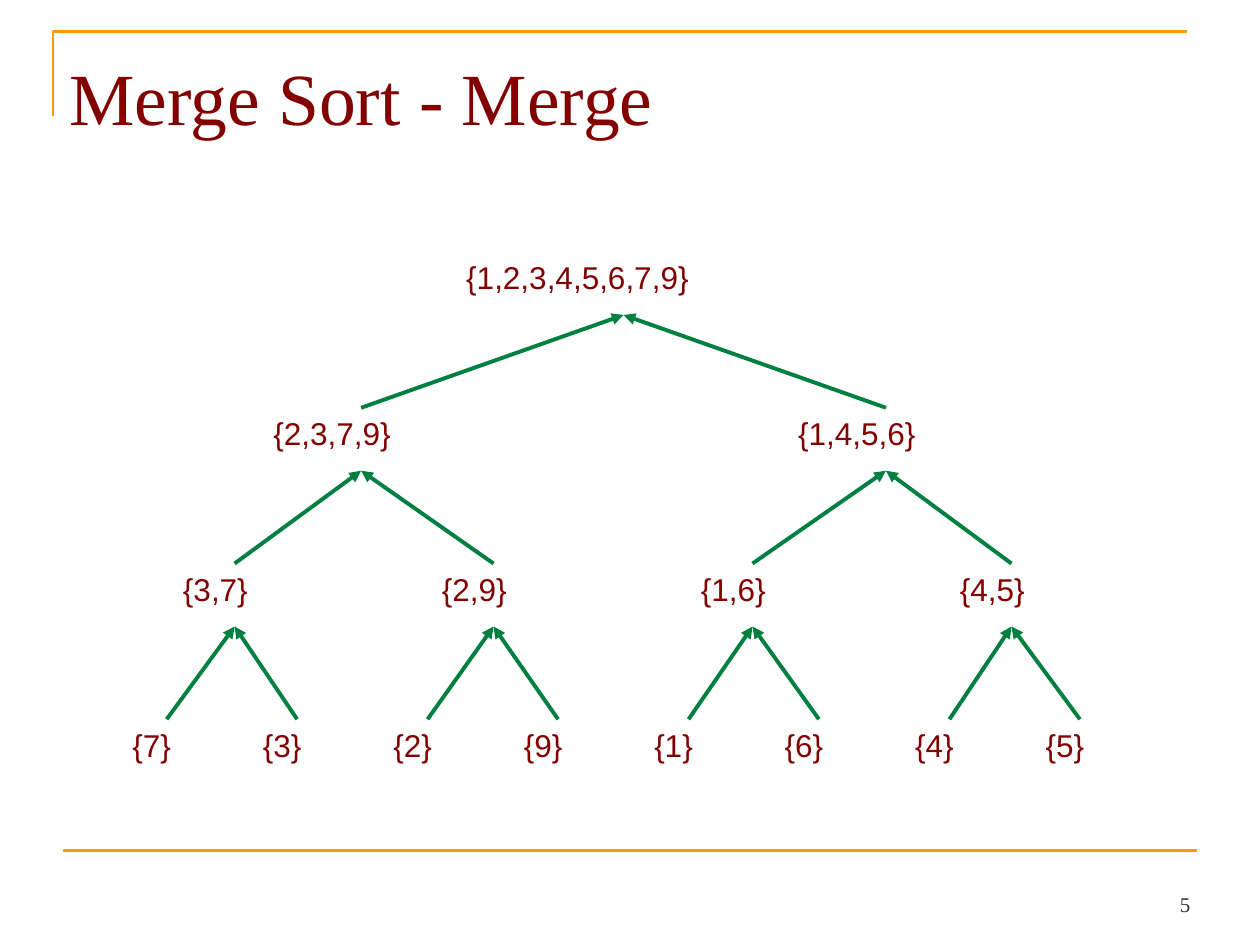
from dataclasses import dataclass

from lxml.etree import SubElement
from pptx import Presentation
from pptx.dml.color import RGBColor
from pptx.enum.shapes import MSO_CONNECTOR
from pptx.enum.text import MSO_ANCHOR, MSO_AUTO_SIZE, PP_ALIGN
from pptx.oxml.ns import qn
from pptx.shapes.connector import Connector
from pptx.slide import Slide
from pptx.text.text import TextFrame
from pptx.util import Cm, Pt

MAROON = RGBColor(0x82, 0x00, 0x00)
GREEN = RGBColor(0x00, 0x80, 0x40)
ORANGE = RGBColor(0xFF, 0x99, 0x00)
GRAY = RGBColor(0x33, 0x33, 0x33)

# Tree measures in centimetres
TREE_TOP = 5.08
LEVEL_STEP = 3.14
LABEL_HEIGHT = 0.97
ARROW_OFFSET = 1.27
INSET = 0.13


@dataclass
class Level:
    """One row of the merge tree; joint is where arrows meet a label."""
    labels: list[str]
    left: float
    step: float
    width: float
    joint: float

    def joint_x(self, index: int) -> float:
        return self.left + index * self.step + self.joint


LEVELS = [
    Level(["{1,2,3,4,5,6,7,9}"], 9.27, 0, 4.78, 3.3),
    Level(["{2,3,7,9}", "{1,4,5,6}"], 5.38, 10.58, 2.67, 1.9),
    Level(["{3,7}", "{2,9}", "{1,6}", "{4,5}"], 3.56, 5.22, 1.6, 1.17),
    Level(["{7}", "{3}", "{2}", "{9}", "{1}", "{6}", "{4}", "{5}"],
          2.54, 2.63, 1.07, 0.82),
]


def set_text(frame: TextFrame, text: str, font: str, size: float,
             color: RGBColor, align: PP_ALIGN = PP_ALIGN.LEFT) -> None:
    frame.margin_left = frame.margin_right = Cm(INSET)
    frame.margin_top = frame.margin_bottom = Cm(INSET)
    paragraph = frame.paragraphs[0]
    paragraph.alignment = align
    run = paragraph.add_run()
    run.text = text
    run.font.name = font
    run.font.size = Pt(size)
    run.font.color.rgb = color


def add_label(slide: Slide, left: float, top: float, width: float,
              height: float) -> TextFrame:
    frame = slide.shapes.add_textbox(
        Cm(left), Cm(top), Cm(width), Cm(height)).text_frame
    frame.word_wrap = False
    frame.auto_size = MSO_AUTO_SIZE.SHAPE_TO_FIT_TEXT
    return frame


def add_line(slide: Slide, start: tuple[float, float],
             end: tuple[float, float], color: RGBColor,
             width: float) -> Connector:
    line = slide.shapes.add_connector(
        MSO_CONNECTOR.STRAIGHT, Cm(start[0]), Cm(start[1]),
        Cm(end[0]), Cm(end[1]))
    line.line.color.rgb = color
    line.line.width = Pt(width)
    SubElement(line._element.spPr, qn("a:effectLst"))
    return line


def add_merge_arrow(slide: Slide, parent: tuple[float, float],
                    child: tuple[float, float]) -> None:
    arrow = add_line(slide, parent, child, GREEN, 2.25)
    SubElement(arrow.line._get_or_add_ln(), qn("a:headEnd"), type="triangle")


def add_frame(slide: Slide) -> None:
    builder = slide.shapes.build_freeform(Cm(1.07), Cm(2.34))
    builder.add_line_segments(
        [(Cm(1.07), Cm(0.64)), (Cm(23.93), Cm(0.64))], close=False)
    corner = builder.convert_to_shape()
    corner.shadow.inherit = False
    corner.fill.background()
    corner.line.color.rgb = ORANGE
    corner.line.width = Pt(1.5)
    add_line(slide, (1.27, 17.15), (24.13, 17.15), ORANGE, 1.5)


def add_title(slide: Slide) -> None:
    title = slide.shapes.title
    title.left, title.top = Cm(1.27), Cm(0.76)
    title.width, title.height = Cm(22.86), Cm(2.62)
    frame = title.text_frame
    frame.auto_size = MSO_AUTO_SIZE.NONE
    frame.vertical_anchor = MSO_ANCHOR.TOP
    set_text(frame, "Merge Sort - Merge", "Times New Roman", 42, MAROON)
    frame.margin_top = Cm(0.29)


def add_tree(slide: Slide) -> None:
    for depth, level in enumerate(LEVELS):
        top = TREE_TOP + depth * LEVEL_STEP
        for index, label in enumerate(level.labels):
            frame = add_label(slide, level.left + index * level.step, top,
                              level.width, LABEL_HEIGHT)
            set_text(frame, label, "Arial", 18, MAROON)
            # Each pair of neighbours merges into the label above
            if depth > 0:
                parent_x = LEVELS[depth - 1].joint_x(index // 2)
                parent_y = top - LEVEL_STEP + ARROW_OFFSET
                add_merge_arrow(slide, (parent_x, parent_y),
                                (level.joint_x(index), top))


def main() -> None:
    presentation = Presentation()
    presentation.slide_width, presentation.slide_height = Cm(25.4), Cm(19.05)
    slide = presentation.slides.add_slide(presentation.slide_layouts[5])

    # Frame lines and slide number
    add_frame(slide)
    number = add_label(slide, 23.65, 17.91, 0.48, 0.71)
    number.vertical_anchor = MSO_ANCHOR.BOTTOM
    set_text(number, "5", "Times New Roman", 12, GRAY, PP_ALIGN.RIGHT)

    # Title and merge tree
    add_title(slide)
    add_tree(slide)
    presentation.save("out.pptx")


if __name__ == "__main__":
    main()
